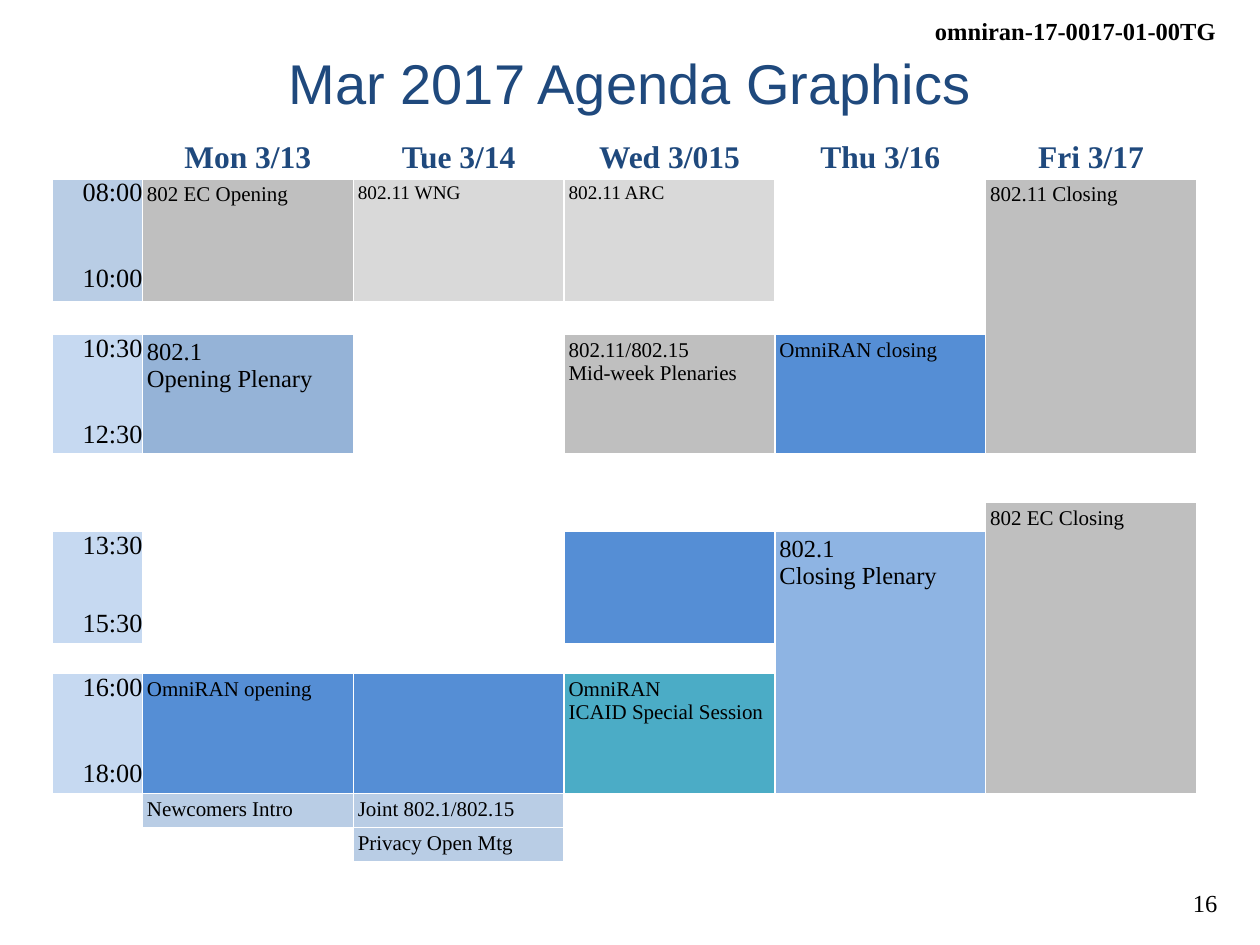
from itertools import product

from lxml.etree import SubElement
from pptx import Presentation
from pptx.dml.color import RGBColor
from pptx.enum.text import MSO_ANCHOR, PP_ALIGN
from pptx.oxml.ns import qn
from pptx.util import Pt

COLORS = {
    "white": "FFFFFF",
    "black": "000000",
    "navy": "1F497D",
    "gray": "BFBFBF",
    "light_gray": "D9D9D9",
    "pale_blue": "B9CDE5",
    "time_blue": "C6D9F1",
    "steel_blue": "95B3D7",
    "sky_blue": "8EB4E3",
    "omniran_blue": "558ED5",
    "teal": "4BACC6",
}
SERIF = "Times New Roman"
DAYS = ["Mon 3/13", "Tue 3/14", "Wed 3/015", "Thu 3/16", "Fri 3/17"]
COLUMN_WIDTHS = [51.4] + [120.5] * len(DAYS)
ROW_HEIGHTS = [21.4, 70.9, 18.3, 66, 0, 27.7, 16.6, 20.6, 41.1, 17.1, 68.6, 18.9, 19.2]
ROW_HEIGHTS.pop(4)
# (row, rows spanned, start, end, gap, fill)
TIMES = [
    (1, 1, "08:00", "10:00", 32.5, "pale_blue"),
    (3, 1, "10:30", "12:30", 32.5, "time_blue"),
    (6, 2, "13:30", "15:30", 28, "time_blue"),
    (9, 1, "16:00", "18:00", 32.5, "time_blue"),
]
SESSIONS = [
    (1, 1, 1, "802 EC Opening", 12, "gray"),
    (1, 2, 1, "802.11 WNG", 11, "light_gray"),
    (1, 3, 1, "802.11 ARC", 11, "light_gray"),
    (1, 5, 3, "802.11 Closing", 12, "gray"),
    (3, 1, 1, "802.1\vOpening Plenary", 14, "steel_blue"),
    (3, 3, 1, "802.11/802.15 \vMid-week Plenaries", 12, "gray"),
    (3, 4, 1, "OmniRAN closing", 12, "omniran_blue"),
    (5, 5, 5, "802 EC Closing", 12, "gray"),
    (6, 3, 2, "", 12, "omniran_blue"),
    (6, 4, 4, "802.1\vClosing Plenary", 14, "sky_blue"),
    (9, 1, 1, "OmniRAN opening", 12, "omniran_blue"),
    (9, 2, 1, "", 12, "omniran_blue"),
    (9, 3, 1, "OmniRAN\nICAID Special Session", 12, "teal"),
    (10, 1, 1, "Newcomers Intro", 12, "pale_blue"),
    (10, 2, 1, "Joint 802.1/802.15", 12, "pale_blue"),
    (11, 2, 1, "Privacy Open Mtg", 12, "pale_blue"),
]
FREE_SPANS = [(4, 0, 2), (4, 1, 3), (4, 2, 2), (4, 3, 2), (4, 4, 2),
              (6, 2, 2), (10, 0, 2), (10, 3, 2), (10, 4, 2)]


def color(name):
    """Return the named colour."""
    return RGBColor.from_string(COLORS[name])


def style_text(text_frame, size, font_name=SERIF, color_name="black", bold=False,
               alignment=PP_ALIGN.LEFT):
    """Give every paragraph of a frame the same look."""
    for paragraph in text_frame.paragraphs:
        paragraph.alignment = alignment
        font = paragraph.font
        font.size, font.name, font.bold = Pt(size), font_name, bold
        font.color.rgb = color(color_name)


def add_label(slide, box, text, size, wrap=False, bottom_inset=3.6, **style):
    """Add a text box in the given box."""
    text_frame = slide.shapes.add_textbox(*map(Pt, box)).text_frame
    text_frame.word_wrap = wrap
    text_frame.vertical_anchor = MSO_ANCHOR.MIDDLE if wrap else MSO_ANCHOR.TOP
    text_frame.margin_bottom = Pt(bottom_inset)
    text_frame.text = text
    style_text(text_frame, size, **style)


def add_borders(cell, bottom_width):
    """Draw white lines around a cell."""
    properties = cell._tc.get_or_add_tcPr()
    for side, width in (("L", 1), ("R", 1), ("T", 1), ("B", bottom_width)):
        line = SubElement(properties, qn(f"a:ln{side}"), w=str(Pt(width)))
        fill = SubElement(line, qn("a:solidFill"))
        SubElement(fill, qn("a:srgbClr"), val=COLORS["white"])


def set_fill(cell, name):
    """Fill a cell with the named colour."""
    cell.fill.solid()
    cell.fill.fore_color.rgb = color(name)


def set_margins(cell, margin):
    """Give a cell equal margins on all sides."""
    cell.margin_left = cell.margin_right = Pt(margin)
    cell.margin_top = cell.margin_bottom = Pt(margin)


def write_cell(cell, text, size, margin=0, **style):
    """Write styled text in a cell."""
    if text:
        set_margins(cell, margin)
        cell.text_frame.text = text
        for paragraph in cell.text_frame.paragraphs:
            for end in paragraph._p.findall(qn("a:endParaRPr")):
                paragraph._p.remove(end)
        style_text(cell.text_frame, size, **style)


def merge_down(table, row, column, span):
    """Join cells downwards and return the first one."""
    cell = table.cell(row, column)
    if span > 1:
        cell.merge(table.cell(row + span - 1, column))
    return cell


def prepare_cells(table):
    """Make every cell white, empty and free to shrink."""
    last_column = len(COLUMN_WIDTHS) - 1
    for row, column in product(range(len(ROW_HEIGHTS)), range(len(COLUMN_WIDTHS))):
        cell = table.cell(row, column)
        add_borders(cell, 3 if row == 0 else 1)
        set_margins(cell, 0)
        SubElement(cell.text_frame.paragraphs[0]._p, qn("a:endParaRPr"), sz="100")
        if column == last_column and row >= 10:
            cell.fill.background()
        else:
            set_fill(cell, "white")


def add_agenda(slide, left, top):
    """Add the week's agenda as a table at the given corner."""
    table = slide.shapes.add_table(
        len(ROW_HEIGHTS), len(COLUMN_WIDTHS), Pt(left), Pt(top),
        Pt(sum(COLUMN_WIDTHS)), Pt(sum(ROW_HEIGHTS))).table
    table.first_row = table.horz_banding = False
    for column, width in zip(table.columns, COLUMN_WIDTHS):
        column.width = Pt(width)
    for row, height in zip(table.rows, ROW_HEIGHTS):
        row.height = Pt(height)
    prepare_cells(table)
    for position in FREE_SPANS:
        merge_down(table, *position)
    for column, day in enumerate(DAYS, 1):
        write_cell(table.cell(0, column), day, 18, color_name="navy", bold=True,
                   alignment=PP_ALIGN.CENTER)
    for row, span, start, end, gap, fill in TIMES:
        cell = merge_down(table, row, 0, span)
        set_fill(cell, fill)
        write_cell(cell, f"{start}\n{end}", 15, alignment=PP_ALIGN.RIGHT)
        cell.text_frame.paragraphs[1].space_before = Pt(gap)
    for row, column, span, text, size, fill in SESSIONS:
        cell = merge_down(table, row, column, span)
        set_fill(cell, fill)
        write_cell(cell, text, size, margin=2.6)


def main():
    """Build the agenda slide and save it."""
    presentation = Presentation()
    presentation.slide_width, presentation.slide_height = Pt(720), Pt(540)
    slide = presentation.slides.add_slide(presentation.slide_layouts[6])
    add_label(slide, (525.6, 5.8, 176.4, 24.5), "omniran-17-0017-01-00TG", 14,
              bold=True, alignment=PP_ALIGN.RIGHT)
    add_label(slide, (671.8, 504, 31, 24.5), "16", 14, alignment=PP_ALIGN.RIGHT)
    add_label(slide, (36, 21.6, 648, 56.2), "Mar 2017 Agenda Graphics", 32, wrap=True,
              bottom_inset=8.6, font_name="Arial", color_name="navy",
              alignment=PP_ALIGN.CENTER)
    add_agenda(slide, 30, 80)
    presentation.save("out.pptx")


if __name__ == "__main__":
    main()
